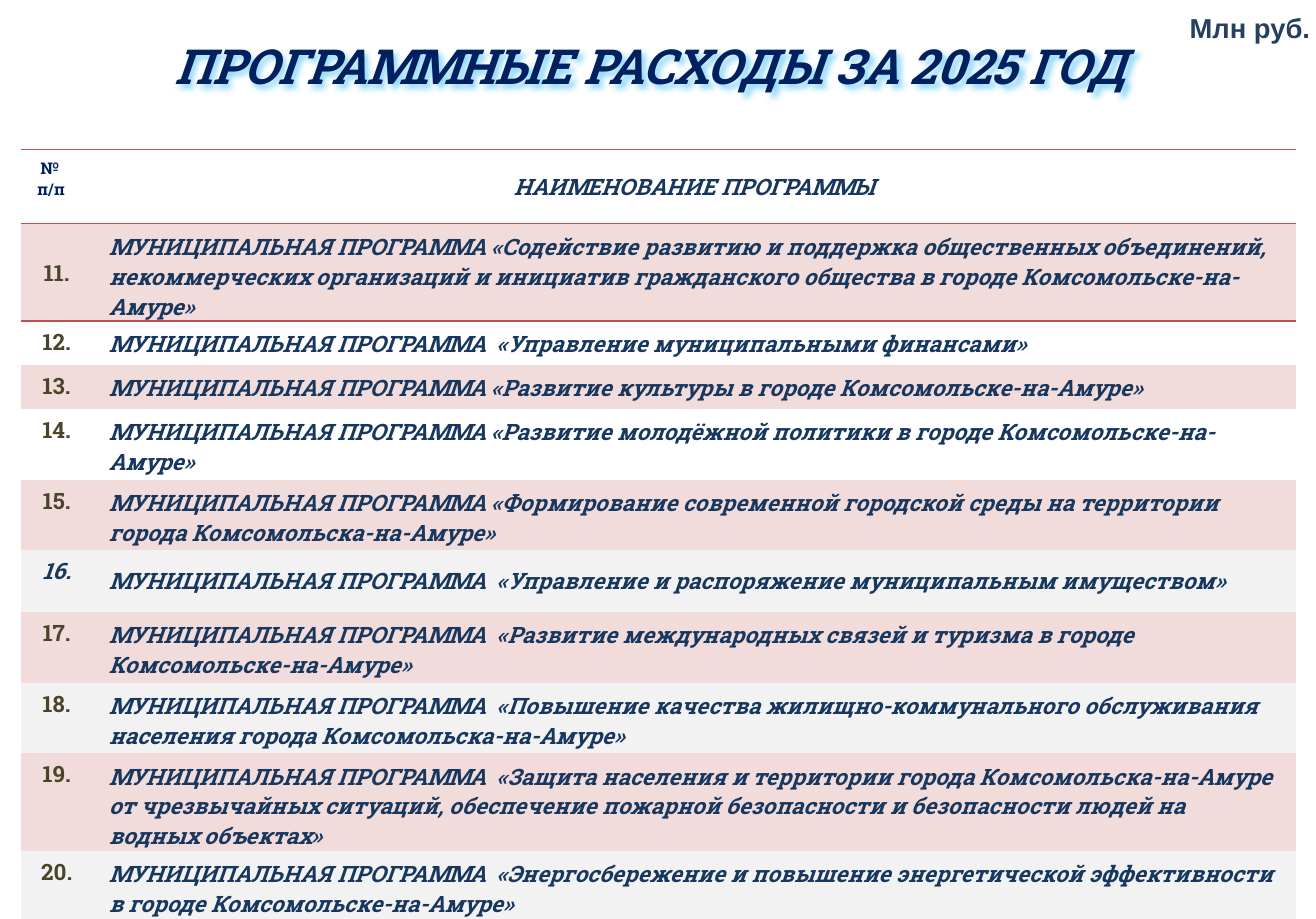
from dataclasses import dataclass

from lxml import etree
from pptx import Presentation
from pptx.dml.color import RGBColor
from pptx.enum.text import MSO_ANCHOR, PP_ALIGN
from pptx.oxml import parse_xml
from pptx.oxml.ns import nsdecls, qn
from pptx.util import Inches, Pt

CENTER, LEFT = PP_ALIGN.CENTER, PP_ALIGN.LEFT
MIDDLE, TOP = MSO_ANCHOR.MIDDLE, MSO_ANCHOR.TOP
PLAIN_TABLE_STYLE = "{2D5ABB26-0587-4C30-8999-92F81FD0307C}"


@dataclass(frozen=True)
class Theme:
    serif: str = "Roboto Slab"
    sans: str = "Arial"
    navy: str = "002060"
    blue: str = "17375E"
    unit_blue: str = "254061"
    olive: str = "4A452A"
    red: str = "C0504D"
    pink: str = "F2DCDB"
    gray: str = "F2F2F2"
    glow: str = "8FD8F8"
    title_size: int = 30
    unit_size: int = 17
    body_size: int = 14
    small_size: int = 10


THEME = Theme()
PREFIX = "МУНИЦИПАЛЬНАЯ ПРОГРАММА "
FIRST_NUMBER = 11
ITALIC_NUMBER = 16
HEADER_HEIGHT = 0.64
COLUMN_WIDTHS = (0.62, 10.39)
NAME_INSETS = (0.14, 0.07, 0.14, 0.07)
NUMBER_INSETS = (0.1, 0.05, 0.1, 0.05)

# Row height, row fill, programme name
PROGRAMMES = [
    (0.84, THEME.pink, "«Содействие развитию и поддержка общественных объединений, "
     "некоммерческих организаций и инициатив гражданского общества "
     "в городе Комсомольске-на-Амуре»"),
    (0.38, None, " «Управление муниципальными финансами»"),
    (0.38, THEME.pink, "«Развитие культуры в городе Комсомольске-на-Амуре»"),
    (0.61, None, "«Развитие молодёжной политики в городе Комсомольске-на-Амуре»"),
    (0.61, THEME.pink, "«Формирование современной городской среды на территории "
     "города Комсомольска-на-Амуре»"),
    (0.53, THEME.gray, " «Управление и распоряжение муниципальным имуществом»"),
    (0.61, THEME.pink, " «Развитие международных связей и туризма в городе "
     "Комсомольске-на-Амуре»"),
    (0.61, THEME.gray, " «Повышение качества жилищно-коммунального обслуживания "
     "населения города Комсомольска-на-Амуре»"),
    (0.84, THEME.pink, " «Защита населения и территории города Комсомольска-на-Амуре "
     "от чрезвычайных ситуаций, обеспечение пожарной безопасности "
     "и безопасности людей на водных объектах»"),
    (0.61, THEME.gray, " «Энергосбережение и повышение энергетической эффективности "
     "в городе Комсомольске-на-Амуре»"),
]


def write(frame, text, size, color, font=THEME.serif, italic=False, align=LEFT):
    frame.text = text
    paragraph = frame.paragraphs[0]
    paragraph.alignment = align
    for run in paragraph.runs:
        run.font.name = font
        run.font.size = Pt(size)
        run.font.bold = True
        run.font.italic = italic
        run.font.color.rgb = RGBColor.from_string(color)


def set_insets(holder, insets):
    (holder.margin_left, holder.margin_top,
     holder.margin_right, holder.margin_bottom) = map(Inches, insets)


def add_title(slide, left, top, width, height):
    title = slide.shapes.title
    title.left, title.top = Inches(left), Inches(top)
    title.width, title.height = Inches(width), Inches(height)
    frame = title.text_frame
    frame.word_wrap = True
    frame.vertical_anchor = MIDDLE
    set_insets(frame, (0.12, 0.06, 0.12, 0.06))
    write(frame, "ПРОГРАММНЫЕ РАСХОДЫ ЗА 2025 ГОД", THEME.title_size,
          THEME.navy, italic=True, align=CENTER)
    # Soft light-blue shadow behind the letters
    title.element.spPr.append(parse_xml(
        f'<a:effectLst {nsdecls("a")}><a:outerShdw blurRad="50800" dist="38100" '
        f'dir="2700000" algn="tl" rotWithShape="0"><a:srgbClr val="{THEME.glow}"/>'
        '</a:outerShdw></a:effectLst>'))


def add_unit(slide, left, top, width, height):
    unit = slide.shapes.add_textbox(*map(Inches, (left, top, width, height)))
    unit.text_frame.word_wrap = False
    write(unit.text_frame, "Млн руб.", THEME.unit_size, THEME.unit_blue, THEME.sans)


def add_border(cell, side):
    properties = cell._tc.get_or_add_tcPr()
    line = etree.SubElement(properties, qn(f"a:{side}"), w=str(Pt(1)))
    fill = etree.SubElement(line, qn("a:solidFill"))
    etree.SubElement(fill, qn("a:srgbClr"), val=THEME.red)


def fill_cell(cell, text, color, insets, anchor=MIDDLE, size=THEME.body_size,
              italic=False, align=LEFT, background=None, borders=()):
    set_insets(cell, insets)
    cell.vertical_anchor = anchor
    write(cell.text_frame, text, size, color, italic=italic, align=align)
    for side in borders:
        add_border(cell, side)
    if background:
        cell.fill.solid()
        cell.fill.fore_color.rgb = RGBColor.from_string(background)
    else:
        cell.fill.background()


def add_programmes(slide, left, top):
    heights = [HEADER_HEIGHT] + [height for height, _, _ in PROGRAMMES]
    holder = slide.shapes.add_table(
        len(heights), len(COLUMN_WIDTHS), Inches(left), Inches(top),
        Inches(sum(COLUMN_WIDTHS)), Inches(sum(heights)))
    table = holder.table
    table.first_row = table.horz_banding = False
    for style in holder.element.iter(qn("a:tableStyleId")):
        style.text = PLAIN_TABLE_STYLE
    for column, width in zip(table.columns, COLUMN_WIDTHS):
        column.width = Inches(width)
    for row, height in zip(table.rows, heights):
        row.height = Inches(height)

    # Header row
    fill_cell(table.cell(0, 0), " № п/п", THEME.navy, (0.14, 0.07, 0.14, 0.2),
              size=THEME.small_size, borders=("lnT", "lnB"))
    fill_cell(table.cell(0, 1), "НАИМЕНОВАНИЕ ПРОГРАММЫ", THEME.blue, (0.05,) * 4,
              italic=True, align=CENTER, borders=("lnT", "lnB"))

    # Programme rows
    for index, (_, background, name) in enumerate(PROGRAMMES):
        number = FIRST_NUMBER + index
        slanted = number == ITALIC_NUMBER
        borders = () if index else ("lnT",)
        fill_cell(table.cell(index + 1, 0), f"{number}.",
                  THEME.blue if slanted else THEME.olive, NUMBER_INSETS,
                  anchor=TOP if index else MIDDLE, italic=slanted, align=CENTER,
                  background=background, borders=borders)
        fill_cell(table.cell(index + 1, 1), PREFIX + name, THEME.blue, NAME_INSETS,
                  italic=True, background=background, borders=borders)


def main():
    deck = Presentation()
    deck.slide_width, deck.slide_height = Inches(11.36), Inches(7.93)
    slide = deck.slides.add_slide(deck.slide_layouts[5])
    add_title(slide, 0.18, 0.25, 10.87, 0.63)
    add_unit(slide, 10.17, 0.05, 1.25, 0.39)
    add_programmes(slide, 0.18, 1.29)
    deck.save("out.pptx")


if __name__ == "__main__":
    main()
